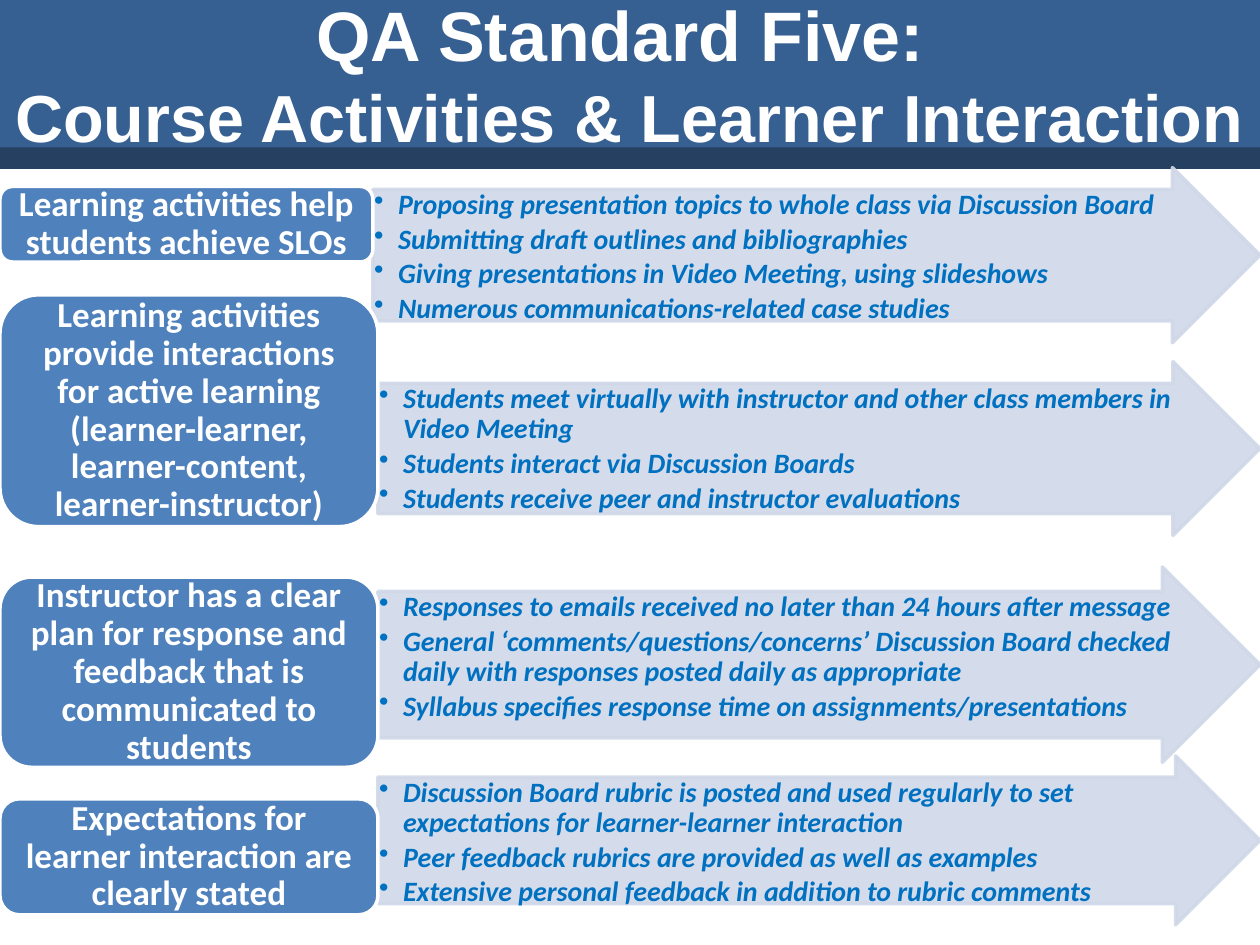
"""Build the slide on course activities and learner interaction."""
from lxml import etree
from pptx import Presentation, util as u
from pptx.dml.color import RGBColor
from pptx.enum import shapes, text
from pptx.oxml import ns

NAVY = RGBColor(0x25, 0x40, 0x61)
BLUE = RGBColor(0x37, 0x60, 0x92)
LABEL = RGBColor(0x4F, 0x81, 0xBD)
PALE = RGBColor(0xD0, 0xD8, 0xE8)
INK = RGBColor(0x00, 0x70, 0xC0)
WHITE = RGBColor(0xFF, 0xFF, 0xFF)
KIND = shapes.MSO_SHAPE

ROWS = [
    (1.33, 1.39, 1.48, 0.6, 2.96,
     "Learning activities help students achieve SLOs",
     ["Proposing presentation topics to whole class via Discussion Board",
      "Submitting draft outlines and bibliographies",
      "Giving presentations in Video Meeting, using slideshows",
      "Numerous communications-related case studies"]),
    (2.87, 1.38, 2.34, 1.84, 3,
     "Learning activities provide interactions for active learning "
     "(learner-learner, learner-content, learner-instructor)",
     ["Students meet virtually with instructor and other class members in Video Meeting",
      "Students interact via Discussion Boards",
      "Students receive peer and instructor evaluations"]),
    (4.5, 1.55, 4.58, 1.51, 3,
     "Instructor has a clear plan for response and feedback that is communicated to students",
     ["Responses to emails received no later than 24 hours after message",
      "General ‘comments/questions/concerns’ Discussion Board checked "
      "daily with responses posted daily as appropriate",
      "Syllabus specifies response time on assignments/presentations"]),
    (6, 1.34, 6.34, 0.92, 3,
     "Expectations for learner interaction are clearly stated",
     ["Discussion Board rubric is posted and used regularly to set "
      "expectations for learner-learner interaction",
      "Peer feedback rubrics are provided as well as examples",
      "Extensive personal feedback in addition to rubric comments"]),
]

deck = Presentation()
deck.slide_width, deck.slide_height = u.Inches(10), u.Inches(7.5)
slide = deck.slides.add_slide(deck.slide_layouts[5])


def draw(kind, box, fill, line=None, pad=(0, 0)):
    shape = slide.shapes.add_shape(kind, *[u.Inches(n) for n in box])
    shape.shadow.inherit = False
    shape.fill.solid()
    shape.fill.fore_color.rgb = fill
    if line is None:
        shape.line.fill.background()
    else:
        shape.line.color.rgb = line
        shape.line.width = u.Pt(2)
    frame = shape.text_frame
    frame.word_wrap = True
    frame.margin_left = frame.margin_right = u.Inches(pad[0])
    frame.margin_top = frame.margin_bottom = u.Inches(pad[1])
    return shape


def write(para, words, size, color, face="Calibri", slant=False):
    run = para.add_run()
    run.text = words
    font = run.font
    font.name, font.size, font.bold, font.italic = face, u.Pt(size), True, slant
    font.color.rgb = color


draw(KIND.RECTANGLE, (0, 0, 10, 1.2), BLUE)
draw(KIND.RECTANGLE, (0, 1.17, 10, 0.17), NAVY)

title = slide.shapes.title
slide.shapes._spTree.append(title._element)
title.left, title.top = 0, 0
title.width, title.height = u.Inches(10), u.Inches(1.17)
frame = title.text_frame
frame.word_wrap = True
frame.auto_size = text.MSO_AUTO_SIZE.NONE
frame.vertical_anchor = text.MSO_ANCHOR.MIDDLE
para = frame.paragraphs[0]
para.alignment = text.PP_ALIGN.CENTER
write(para, "QA Standard Five: ", 40, WHITE, "Arial")
para.add_line_break()
write(para, "Course Activities & Learner Interaction", 38, WHITE, "Arial")

for top, high, y, tall, wide, head, points in ROWS:
    arrow = draw(KIND.RIGHT_ARROW, (wide, top, 10 - wide, high), PALE, PALE, (0.01, 0.01))
    arrow.adjustments[0], arrow.adjustments[1] = 0.75, 0.5
    for color in arrow._element.spPr.iter(ns.qn("a:srgbClr")):
        etree.SubElement(color, ns.qn("a:alpha"), val="90000")
    frame = arrow.text_frame
    frame.vertical_anchor = text.MSO_ANCHOR.TOP
    for i, point in enumerate(points):
        para = frame.paragraphs[0] if i == 0 else frame.add_paragraph()
        para.alignment = text.PP_ALIGN.LEFT
        para.line_spacing = 0.9
        para.space_after = u.Pt(2.5)
        props = para._p.get_or_add_pPr()
        props.set("marL", str(u.Inches(0.19)))
        props.set("indent", str(-u.Inches(0.19)))
        etree.SubElement(props, ns.qn("a:buChar"), char="•")
        write(para, point, 16, INK, slant=True)

    label = draw(KIND.ROUNDED_RECTANGLE, (0, y, wide, tall), LABEL, WHITE, (0.08, 0.04))
    label.text_frame.vertical_anchor = text.MSO_ANCHOR.MIDDLE
    para = label.text_frame.paragraphs[0]
    para.alignment = text.PP_ALIGN.CENTER
    para.line_spacing = 0.9
    write(para, head, 20, WHITE)

deck.save("out.pptx")
